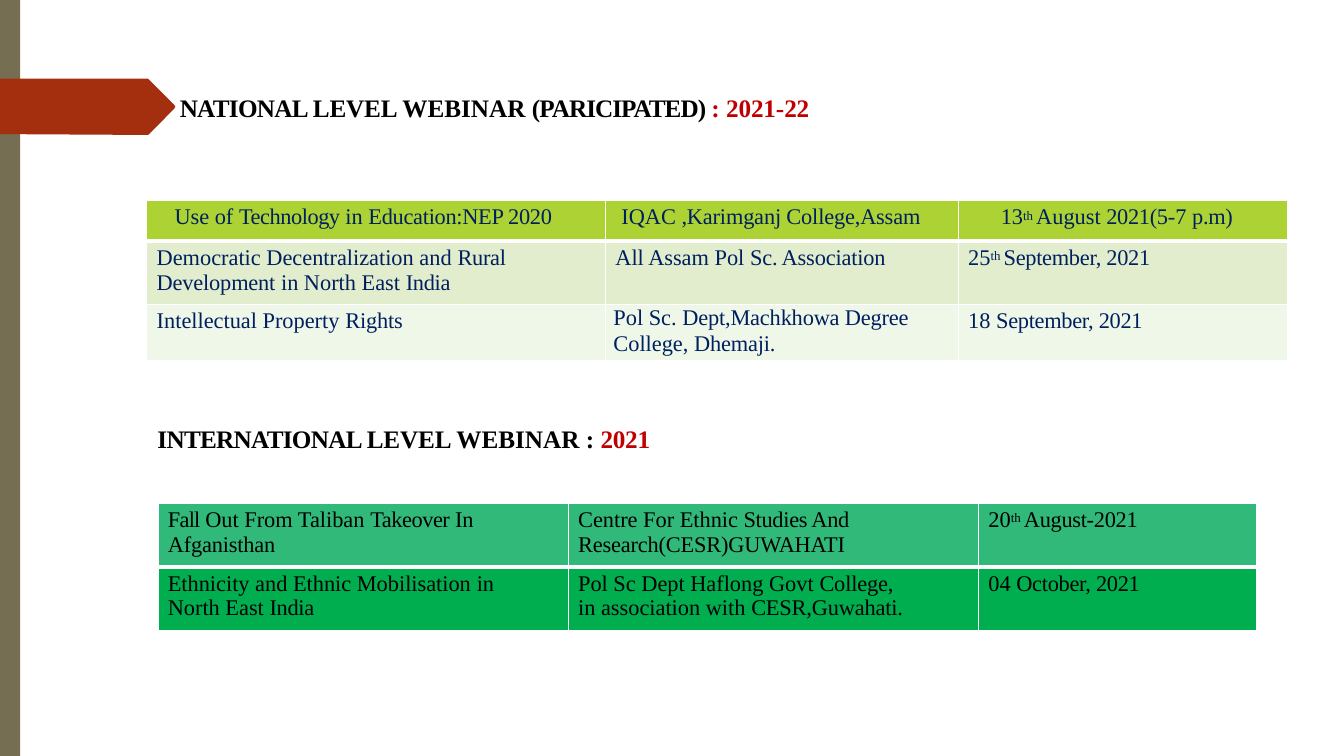
from lxml import etree
from pptx import Presentation
from pptx.dml.color import RGBColor as RGB
from pptx.enum.shapes import MSO_SHAPE as Shape
from pptx.enum.text import MSO_ANCHOR as Anchor, MSO_AUTO_SIZE as AutoSize, PP_ALIGN as Align
from pptx.oxml.ns import qn
from pptx.util import Cm, Pt


def paint(fill, color):
    fill.solid()
    fill.fore_color.rgb = RGB.from_string(color)


def write(paragraph, runs, size, color, bold=False):
    """Each run is (text, letter spacing in 1/100 pt[, own colour])."""
    paragraph.alignment = Align.LEFT
    for words, spacing, *own_color in runs:
        run = paragraph.add_run()
        run.text = words
        ordinal = words == "th "
        look = {"name": "Times New Roman", "bold": bold,
                "size": Pt(15.8 if ordinal else size)}
        for key, value in look.items():
            setattr(run.font, key, value)
        paint(run.font.fill, own_color[0] if own_color else color)
        props = run._r.get_or_add_rPr()
        props.set("spc", str(spacing))
        if ordinal:
            props.set("baseline", "21000")


prs = Presentation()
prs.slide_width, prs.slide_height = Cm(33.87), Cm(19.05)
slide = prs.slides.add_slide(prs.slide_layouts[5])
shapes = slide.shapes

# Side stripe and red pointer
stripe = shapes.add_shape(Shape.RECTANGLE, 0, 0, Cm(0.51), prs.slide_height)
outline = [(0, 1.98), (0, 3.38), (3.45, 3.4), (3.73, 3.4), (3.76, 3.38), (4.39, 2.74),
           (4.42, 2.69), (4.39, 2.64), (3.76, 2.01), (3.73, 1.98)]
corners = [(Cm(x), Cm(y)) for x, y in outline]
builder = shapes.build_freeform(*corners[0])
builder.add_line_segments(corners[1:], close=True)
pointer = builder.convert_to_shape()
for decoration, color in ((stripe, "766E53"), (pointer, "A42F0F")):
    paint(decoration.fill, color)
    decoration.line.fill.background()
    decoration.shadow.inherit = False

# Headings
national = shapes.title
national.left, national.top, national.width, national.height = Cm(4.5), Cm(2.26), Cm(16.18), Cm(0.84)
international = shapes.add_textbox(Cm(3.94), Cm(10.59), Cm(12.45), Cm(0.84))
frame_format = {"margin_left": Cm(0.03), "margin_right": 0, "margin_top": Cm(0.07), "margin_bottom": 0,
                "word_wrap": True, "auto_size": AutoSize.NONE, "vertical_anchor": Anchor.TOP}
headings = [
    (national, [("NATIONAL ", -50), ("LEVEL ", -10), ("WEBINAR ", 0), ("(PARICIPATED) ", -70),
                (": ", 0, "C00000"), ("2021-", -10, "C00000"), ("22", -20, "C00000")]),
    (international, [("INTERNATIONAL ", -50), ("LEVEL ", -10), ("WEBINAR : ", 0),
                     ("2021", -20, "C00000")]),
]
for heading, runs in headings:
    for key, value in frame_format.items():
        setattr(heading.text_frame, key, value)
    write(heading.text_frame.paragraphs[0], runs, 18, "000000", bold=True)

# Webinars: each cell is its left margin in cm, then its paragraphs
national_rows = [
    [(0.7, [("Use of ", 0), ("Technology ", -30), ("in ", 0), ("Education:NEP 2020", -20)]),
     (0.4, [("IQAC ", 0), (",Karimganj College,Assam", -10)]),
     (1.07, [("13", 0), ("th ", 0), ("August ", 0), ("2021(5-", -20), ("7 ", 0), ("p.m)", -20)])],
    [(0.25, [("Democratic Decentralization and ", 0), ("Rural ", -20), ("Development", -10),
             (" in North East ", 0), ("India", -20)]),
     (0.25, [("All Assam Pol ", 0), ("Sc. Association", -10)]),
     (0.25, [("25", 0), ("th ", 0), ("September, 2021", -20)])],
    [(0.25, [("Intellectual Property ", 0), ("Rights", -10)]),
     (0.2, [("Pol Sc. ", 0), ("Dept,Machkhowa Degree", -10)], [("College, ", 0), ("Dhemaji.", -10)]),
     (0.25, [("18 ", 0), ("September, 2021", -20)])],
]
international_rows = [
    [(0.25, [("Fall ", -50), ("Out From Taliban ", 0), ("Takeover ", -30), ("In", -20)],
      [("Afganisthan", -10)]),
     (0.25, [("Centre For Ethnic", 0), (" Studies And", -20)], [("Research(CESR)GUWAHATI", -10)]),
     (0.25, [("20", 0), ("th ", 0), ("August-2021", -20)])],
    [(0.25, [("Ethnicity and Ethnic Mobilisation ", 0), ("in ", -20), ("North East ", 0), ("India", -20)]),
     (0.25, [("Pol Sc Dept Haflong Govt ", 0), ("College, ", -10), ("in association with ", 0),
             ("CESR,Guwahati.", -10)]),
     (0.25, [("04 ", 0), ("October, 2021", -20)])],
]
# left, top, column widths, row heights, right margins, row fills, text colour
layouts = [
    (national_rows, 3.7, 5.06, (11.56, 8.89, 8.31), (1.02, 1.6, 1.4), (0.5, 0, 0),
     ("ACD233", "E1EDCD", "EFF7E8"), "001F5F"),
    (international_rows, 3.98, 12.68, (10.34, 10.34, 7.01), (1.61, 1.61), (1.2, 1.9, 0),
     ("30B979", "00AE50"), "000000"),
]
for rows, left, top, widths, heights, right_margins, fills, ink in layouts:
    webinars = shapes.add_table(len(rows), len(widths), Cm(left), Cm(top),
                                Cm(sum(widths)), Cm(sum(heights))).table
    for column, width in zip(webinars.columns, widths):
        column.width = Cm(width)
    for r, row in enumerate(rows):
        webinars.rows[r].height = Cm(heights[r])
        for c, (indent, *paragraphs) in enumerate(row):
            cell = webinars.cell(r, c)
            tight = indent == 0.2
            cell_format = {"margin_left": Cm(indent), "margin_right": Cm(right_margins[c]),
                           "margin_top": Cm(0 if tight else 0.1), "margin_bottom": 0}
            for key, value in cell_format.items():
                setattr(cell, key, value)
            for n, runs in enumerate(paragraphs):
                paragraph = cell.text_frame.add_paragraph() if n else cell.text_frame.paragraphs[0]
                write(paragraph, runs, 16, ink)
                if tight and n:
                    paragraph.space_before = Pt(0.8)
                elif tight:
                    paragraph.line_spacing = Pt(18.6)
            # White borders, thick below the first row
            props = cell._tc.get_or_add_tcPr()
            thick = {"a:lnB": r == 0, "a:lnT": r == 1}
            for side in ("a:lnL", "a:lnR", "a:lnT", "a:lnB"):
                border = etree.SubElement(props, qn(side), w=str(Pt(3 if thick.get(side) else 1)))
                solid = etree.SubElement(border, qn("a:solidFill"))
                etree.SubElement(solid, qn("a:srgbClr"), val="FFFFFF")
            paint(cell.fill, fills[r])

prs.save("out.pptx")
